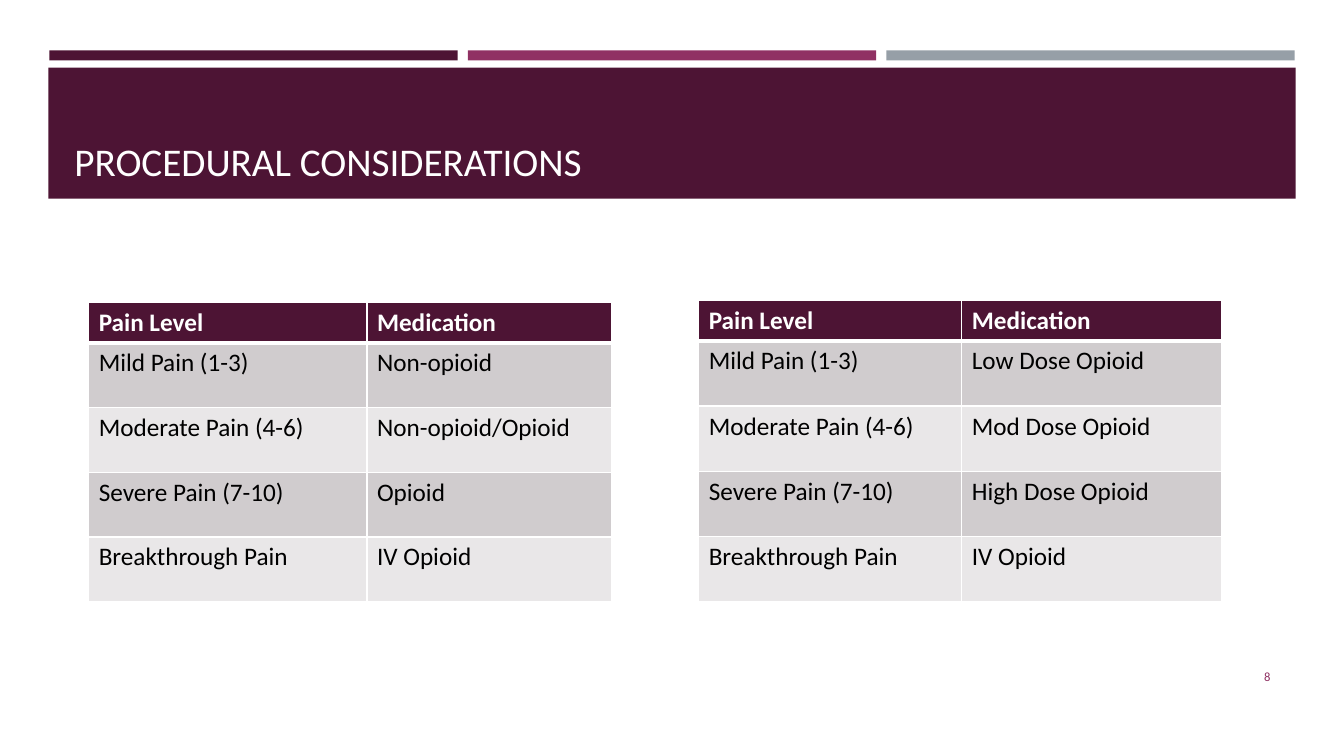
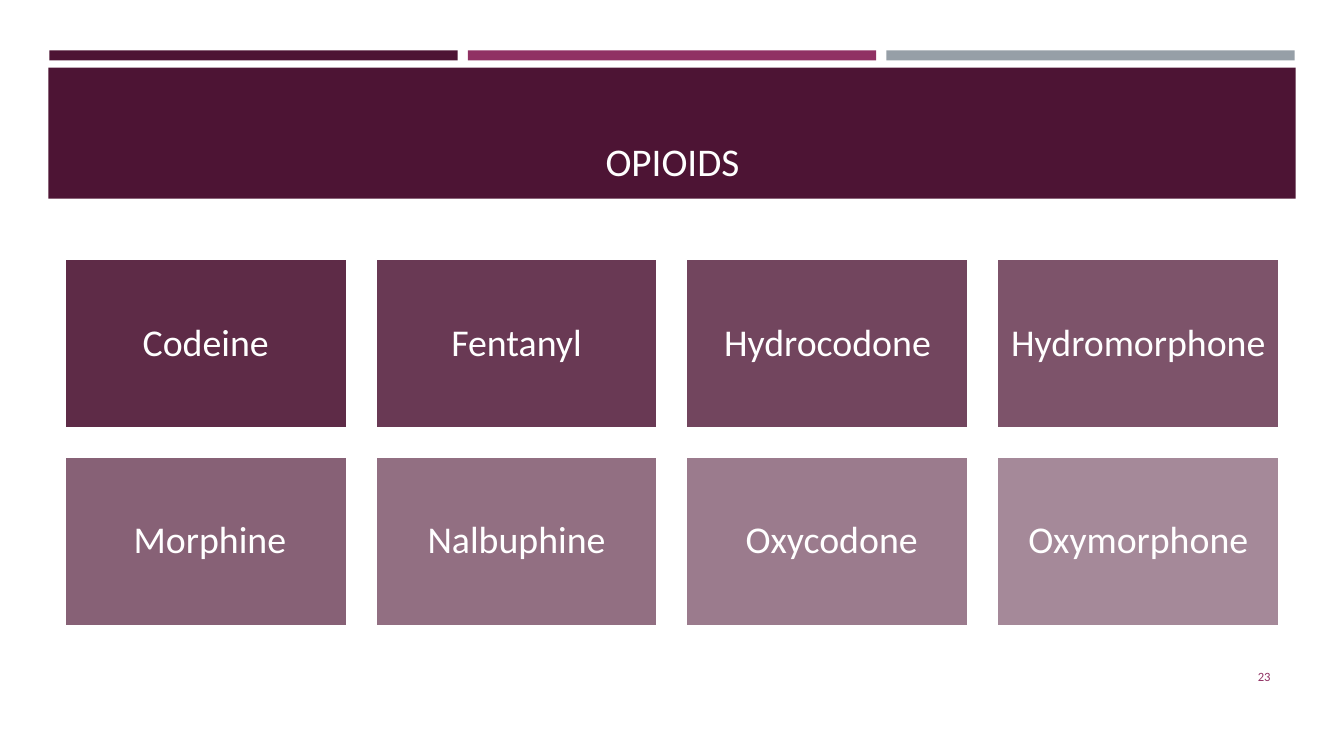
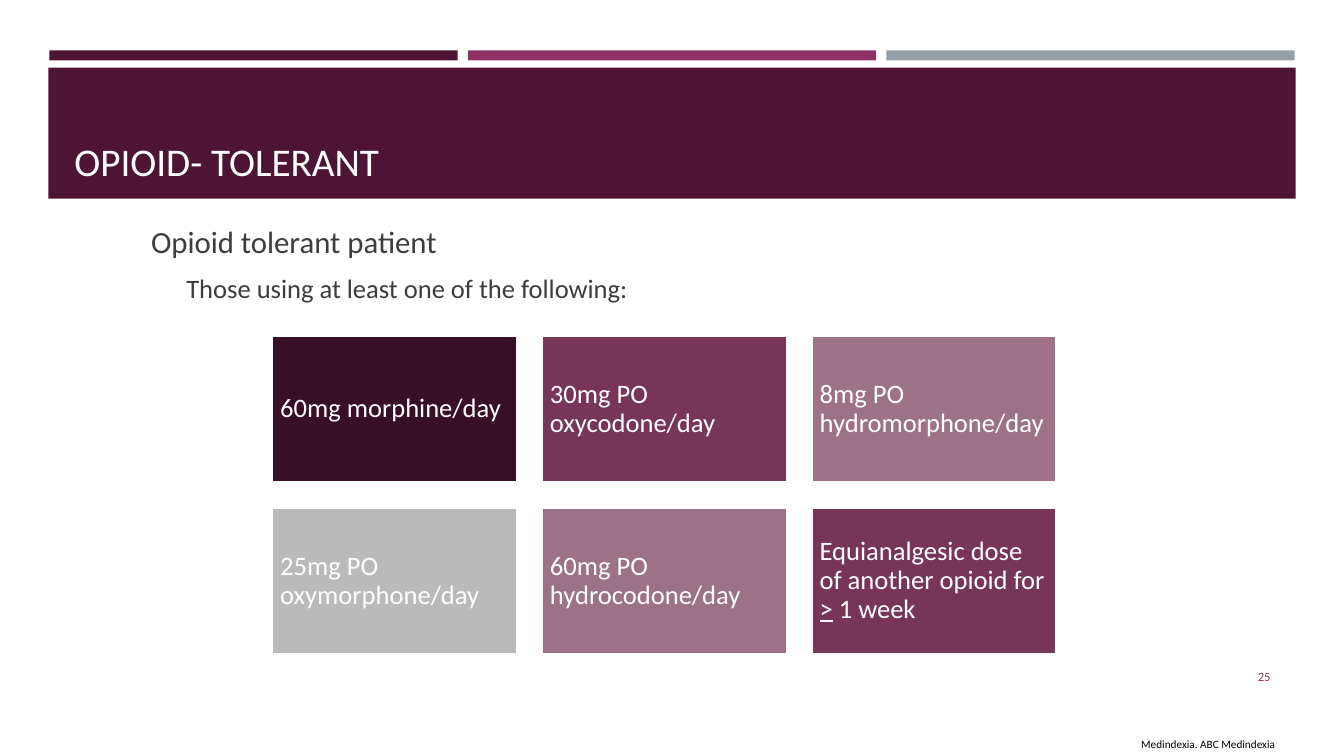
from lxml.etree import SubElement
from pptx import Presentation
from pptx.dml.color import RGBColor
from pptx.enum.shapes import MSO_SHAPE as Shape
from pptx.enum.text import MSO_ANCHOR as Anchor, PP_ALIGN as Align
from pptx.oxml.ns import qn
from pptx.util import Inches, Pt

PLUM = RGBColor(0x4D, 0x14, 0x34)
BERRY = RGBColor(0x90, 0x31, 0x63)
SLATE = RGBColor(0x96, 0x9F, 0xA7)
WHITE = RGBColor(0xFF, 0xFF, 0xFF)
BLACK = RGBColor(0, 0, 0)
INK = RGBColor(0x3D, 0x3D, 0x3D)
ROWS = RGBColor(0xD0, 0xCC, 0xCE), RGBColor(0xE9, 0xE7, 0xE8)
DARK = RGBColor(0x39, 0x0F, 0x26)
WINE = RGBColor(0x77, 0x35, 0x57)
MAUVE = RGBColor(0x9E, 0x72, 0x86)
GREY = RGBColor(0xBA, 0xBA, 0xBA)
FONT = "Calibri"


def grid(left, top, wide, cols, w, h, count):
    """Yield the box of each tile; the gap is the same both ways."""
    gap = (wide - cols * w) / (cols - 1)
    for i in range(count):
        row, col = divmod(i, cols)
        yield left + col * (w + gap), top + row * (h + gap), w, h


def border(cell, side, width):
    line = SubElement(cell._tc.get_or_add_tcPr(), qn(f"a:ln{side}"), w=str(Pt(width)))
    fill = SubElement(line, qn("a:solidFill"))
    SubElement(fill, qn("a:srgbClr"), val=str(WHITE))


class Deck:
    def __init__(self):
        self.prs = Presentation()
        self.prs.slide_width = Inches(13.33)
        self.prs.slide_height = Inches(7.5)

    def start(self, title, number, align=Align.LEFT):
        """Open a slide with its bands, title and number."""
        self.slide = self.prs.slides.add_slide(self.prs.slide_layouts[6])
        for i, color in enumerate((PLUM, BERRY, SLATE)):
            self.rect((0.49 + i * 4.15, 0.5, 4.05, 0.1), color)
        self.rect((0.48, 0.67, 12.37, 1.3), PLUM)
        self.text((0.64, 0.77, 12.06, 1.11), title, 28, WHITE, align, Anchor.BOTTOM)
        self.text((11.55, 6.51, 1.15, 0.4), str(number), 9, BERRY,
                  Align.RIGHT, Anchor.MIDDLE)

    def rect(self, box, color, alpha=100):
        shape = self.slide.shapes.add_shape(Shape.RECTANGLE, *map(Inches, box))
        shape.shadow.inherit = False
        shape.fill.solid()
        shape.fill.fore_color.rgb = color
        shape.line.fill.background()
        if alpha < 100:
            tone = shape._element.spPr.find(qn("a:solidFill"))[0]
            SubElement(tone, qn("a:alpha"), val=str(round(alpha * 1000)))
        return shape

    def put(self, para, text, size, color, align=Align.LEFT, bold=False):
        """Fill a paragraph; words between underscores are underlined."""
        for i, part in enumerate(text.split("_")):
            run = para.add_run()
            run.text = part
            if i % 2:
                run.font.underline = True
        para.alignment = align
        font = para.font
        font.name, font.size, font.bold = FONT, Pt(size), bold
        font.color.rgb = color

    def text(self, box, text, size, color, align=Align.LEFT, anchor=Anchor.TOP):
        frame = self.slide.shapes.add_textbox(*map(Inches, box)).text_frame
        frame.word_wrap = True
        frame.vertical_anchor = anchor
        self.put(frame.paragraphs[0], text, size, color, align)
        return frame

    def tile(self, box, text, size, color, align, inset, alpha=100):
        shape = self.rect(box, color, alpha)
        shape.line.color.rgb = WHITE
        shape.line.width = Pt(1.75)
        frame = shape.text_frame
        frame.word_wrap = True
        frame.vertical_anchor = Anchor.MIDDLE
        frame.margin_left = frame.margin_right = Inches(inset)
        frame.margin_top = frame.margin_bottom = Inches(inset)
        para = frame.paragraphs[0]
        self.put(para, text, size, WHITE, align)
        para.line_spacing = 0.9

    def table(self, left, top, high, cols, rows):
        head = 0.39
        box = left, top, sum(cols), high
        table = self.slide.shapes.add_table(
            len(rows), len(cols), *map(Inches, box)).table
        for col, width in zip(table.columns, cols):
            col.width = Inches(width)
        for r, row in enumerate(rows):
            table.rows[r].height = Inches(
                (high - head) / (len(rows) - 1) if r else head)
            for c, text in enumerate(row):
                cell = table.cell(r, c)
                for side in "LRTB":
                    thick = (side == "B" and r == 0) or (side == "T" and r == 1)
                    border(cell, side, 3 if thick else 1)
                cell.fill.solid()
                cell.fill.fore_color.rgb = ROWS[(r - 1) % 2] if r else PLUM
                self.put(cell.text_frame.paragraphs[0], text, 18,
                         BLACK if r else WHITE, bold=r == 0)


def main():
    deck = Deck()

    deck.start("PROCEDURAL CONSIDERATIONS", 8)
    levels = ("Pain Level", "Mild Pain (1-3)", "Moderate Pain (4-6)",
              "Severe Pain (7-10)", "Breakthrough Pain")
    kinds = "Medication", "Non-opioid", "Non-opioid/Opioid", "Opioid", "IV Opioid"
    doses = ("Medication", "Low Dose Opioid", "Mod Dose Opioid",
             "High Dose Opioid", "IV Opioid")
    deck.table(0.88, 3, 2.96, (2.76, 2.43), list(zip(levels, kinds)))
    deck.table(6.93, 2.98, 2.98, (2.61, 2.58), list(zip(levels, doses)))

    deck.start("OPIOIDS", 23, Align.CENTER)
    drugs = ("Codeine", "Fentanyl", "Hydrocodone", "Hydromorphone",
             " Morphine", "Nalbuphine", " Oxycodone", "Oxymorphone")
    boxes = grid(0.64, 2.57, 12.05, 4, 2.8, 1.68, len(drugs))
    for i, (box, drug) in enumerate(zip(boxes, drugs)):
        alpha = 90 - 40 * i / (len(drugs) - 1)
        deck.tile(box, drug, 27, PLUM, Align.CENTER, 0.11, alpha)

    deck.start("OPIOID- TOLERANT", 25)
    body = deck.text((1.4, 2.16, 5.43, 0.9), "Opioid tolerant patient", 22, INK)
    body.paragraphs[0].space_after = Pt(6)
    para = body.add_paragraph()
    deck.put(para, "Those using at least one of the following:", 19, INK)
    para.space_before = Pt(3)
    para._p.get_or_add_pPr().set("marL", str(Inches(0.35)))
    limits = (
        ("60mg morphine/day", DARK),
        ("30mg PO oxycodone/day", WINE),
        ("8mg PO hydromorphone/day", MAUVE),
        ("25mg PO oxymorphone/day", GREY),
        ("60mg PO hydrocodone/day", MAUVE),
        ("Equianalgesic dose of another opioid for _>_ 1 week", WINE),
    )
    boxes = grid(2.7, 3.33, 7.78, 3, 2.43, 1.46, len(limits))
    for box, (limit, color) in zip(boxes, limits):
        deck.tile(box, limit, 19, color, Align.LEFT, 0.08)
    deck.text((11.22, 7.27, 2, 0.23), "Medindexia. ABC Medindexia", 8, BLACK)

    deck.prs.save("out.pptx")


if __name__ == "__main__":
    main()
